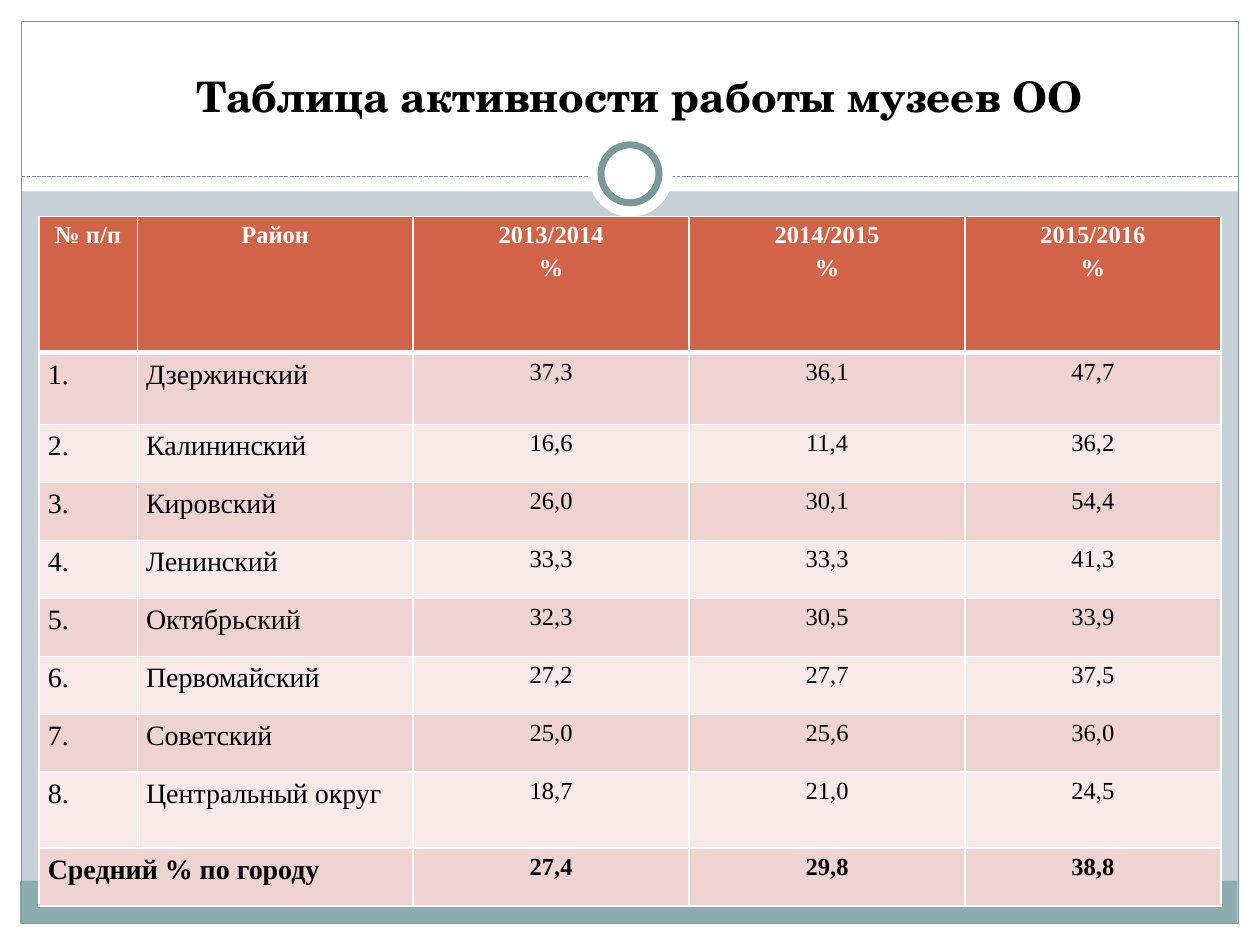
from lxml import etree
from pptx import Presentation
from pptx.dml.color import RGBColor
from pptx.enum.dml import MSO_LINE
from pptx.enum.shapes import MSO_CONNECTOR, MSO_SHAPE
from pptx.enum.text import MSO_ANCHOR, PP_ALIGN
from pptx.oxml.ns import qn
from pptx.util import Inches, Pt

RECT, OVAL = MSO_SHAPE.RECTANGLE, MSO_SHAPE.OVAL
CENTER, JUSTIFY = PP_ALIGN.CENTER, PP_ALIGN.JUSTIFY
WHITE, BLACK = "FFFFFF", "000000"
BACKGROUND, FRAME, FOOTER = "C5D1D7", "7C999A", "8CADAE"
HEADER, BAND_DARK, BAND_LIGHT = "D16349", "EED3D0", "F7EAE9"
TITLE_FONT, TABLE_FONT = "TeX Gyre Schola", "Times New Roman"

COLUMN_WIDTHS = [0.78, 2.19, 2.19, 2.19, 2.03]
ROW_HEIGHTS = [1.08, 0.57] + [0.46] * 6 + [0.6, 0.46]
HEADINGS = ["№ п/п", "Район", "2013/2014\n%", "2014/2015\n%", "2015/2016\n%"]
DISTRICTS = [
    ("Дзержинский", "37,3", "36,1", "47,7"),
    ("Калининский", "16,6", "11,4", "36,2"),
    ("Кировский", "26,0", "30,1", "54,4"),
    ("Ленинский", "33,3", "33,3", "41,3"),
    ("Октябрьский", "32,3", "30,5", "33,9"),
    ("Первомайский", "27,2", "27,7", "37,5"),
    ("Советский", "25,0", "25,6", "36,0"),
    ("Центральный округ", "18,7", "21,0", "24,5"),
]
AVERAGE = ["Средний % по городу", "", "27,4", "29,8", "38,8"]


def rgb(color):
    return RGBColor.from_string(color)


def set_fill(target, color):
    target.fill.solid()
    target.fill.fore_color.rgb = rgb(color)


def set_font(p, name, size, color, bold):
    p.font.name = name
    p.font.size = Pt(size)
    p.font.color.rgb = rgb(color)
    p.font.bold = bold


def add_panel(s, kind, box, fill=None, line=None, width=0.75):
    sp = s.shapes.add_shape(kind, *map(Inches, box))
    sp.shadow.inherit = False
    if fill:
        set_fill(sp, fill)
    else:
        sp.fill.background()
    if line:
        sp.line.color.rgb = rgb(line)
        sp.line.width = Pt(width)
    else:
        sp.line.fill.background()


def add_dashed_line(s, x1, x2, y):
    line = s.shapes.add_connector(
        MSO_CONNECTOR.STRAIGHT, Inches(x1), Inches(y), Inches(x2), Inches(y))
    line.line.color.rgb = rgb(FRAME)
    line.line.width = Pt(0.75)
    line.line.dash_style = MSO_LINE.SQUARE_DOT
    etree.SubElement(line._element.spPr, qn("a:effectLst"))


def add_decor(s):
    for box in [(0, 7.33, 10, 0.17), (0, 0, 10, 1.52),
                (0, 0, 0.17, 7.5), (9.83, 0, 0.17, 7.5)]:
        add_panel(s, RECT, box, WHITE)
    add_panel(s, RECT, (0.16, 6.99, 9.66, 0.34), FOOTER)
    add_panel(s, RECT, (0.17, 0.17, 9.66, 7.16), line=FRAME)
    add_dashed_line(s, 0.17, 9.83, 1.4)
    add_panel(s, OVAL, (4.67, 1.05, 0.67, 0.67), WHITE)
    add_panel(s, OVAL, (4.77, 1.15, 0.46, 0.46), WHITE, FRAME, 4)


def set_borders(cell, top, bottom):
    """Draw white cell borders; top and bottom are widths in points."""
    tc_pr = cell._tc.get_or_add_tcPr()
    for side, width in (("L", 1), ("R", 1), ("T", top), ("B", bottom)):
        ln = etree.SubElement(tc_pr, qn("a:ln" + side), w=str(Pt(width)))
        fill = etree.SubElement(ln, qn("a:solidFill"))
        etree.SubElement(fill, qn("a:srgbClr"), val=WHITE)


def fill_cell(cell, text, row, col):
    is_header, is_average = row == 0, row == len(ROW_HEIGHTS) - 1
    is_label = col < 2 and not is_header
    cell.text = text
    cell.margin_left = cell.margin_right = Inches(0.07)
    cell.margin_top = cell.margin_bottom = 0
    for p in cell.text_frame.paragraphs:
        p.alignment = JUSTIFY if is_label else CENTER
        p.line_spacing = 1.2
        set_font(p, TABLE_FONT, 16 if is_label else 14,
                 WHITE if is_header else BLACK, is_header or is_average)
    set_borders(cell, 3 if row == 1 else 1, 3 if is_header else 1)
    band = BAND_DARK if row % 2 else BAND_LIGHT
    set_fill(cell, HEADER if is_header else band)


def add_activity_table(s):
    numbered = [[f"{n}.", *district] for n, district in enumerate(DISTRICTS, 1)]
    rows = [HEADINGS, *numbered, AVERAGE]
    table = s.shapes.add_table(
        len(rows), len(HEADINGS), Inches(0.31), Inches(1.72),
        Inches(sum(COLUMN_WIDTHS)), Inches(sum(ROW_HEIGHTS))).table
    table.horz_banding = False
    for column, width in zip(table.columns, COLUMN_WIDTHS):
        column.width = Inches(width)
    for row, height in zip(table.rows, ROW_HEIGHTS):
        row.height = Inches(height)
    for i, texts in enumerate(rows):
        for j, text in enumerate(texts):
            fill_cell(table.cell(i, j), text, i, j)
    last = len(rows) - 1
    table.cell(last, 0).merge(table.cell(last, 1))


def add_title(s, text):
    title = s.shapes.title
    title.left, title.top = Inches(1.25), Inches(0.51)
    title.width, title.height = Inches(7.66), Inches(0.5)
    tf = title.text_frame
    tf.text = text
    tf.word_wrap = True
    tf.vertical_anchor = MSO_ANCHOR.MIDDLE
    p = tf.paragraphs[0]
    p.alignment = CENTER
    set_font(p, TITLE_FONT, 24, BLACK, True)
    # Bring the title in front of the white header panel
    s.shapes._spTree.append(title._element)


def main():
    prs = Presentation()
    prs.slide_width, prs.slide_height = Inches(10), Inches(7.5)
    s = prs.slides.add_slide(prs.slide_layouts[5])
    set_fill(s.background, BACKGROUND)
    add_decor(s)
    add_activity_table(s)
    add_title(s, "Таблица активности работы музеев ОО")
    prs.save("out.pptx")


if __name__ == "__main__":
    main()
